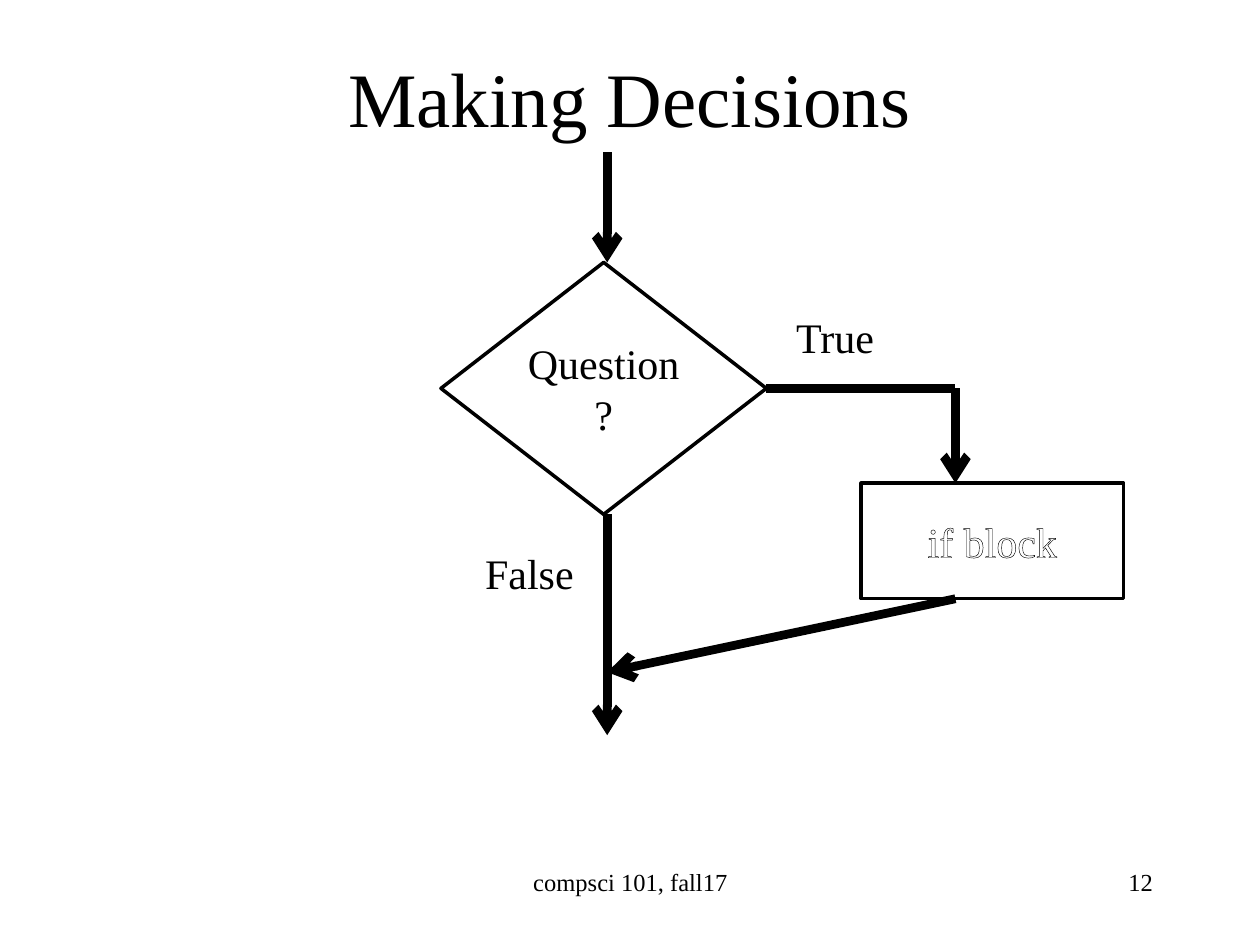
from lxml.etree import SubElement
from pptx import Presentation
from pptx.dml.color import RGBColor
from pptx.enum.shapes import MSO_CONNECTOR, MSO_SHAPE
from pptx.enum.text import MSO_ANCHOR, PP_ALIGN
from pptx.oxml import parse_xml
from pptx.oxml.ns import nsdecls, qn
from pptx.util import Cm, Pt

BLACK, WHITE = "000000", "FFFFFF"


def color(hex_text):
    return RGBColor.from_string(hex_text)


def write(shape, text, size, align, anchor, text_color=BLACK):
    """Put one formatted paragraph in the shape and return its run."""
    text_frame = shape.text_frame
    text_frame.text = text
    text_frame.vertical_anchor = anchor
    paragraph = text_frame.paragraphs[0]
    paragraph.alignment = align
    run = paragraph.runs[0]
    run.font.name = "Times New Roman"
    run.font.size = Pt(size)
    run.font.color.rgb = color(text_color)
    return run


presentation = Presentation()
presentation.slide_width = Cm(25.4)
presentation.slide_height = Cm(19.05)
slide = presentation.slides.add_slide(presentation.slide_layouts[6])

# Title, branch labels and footer
texts = [
    ("Making Decisions", 1.9, 0.84, 21.59, 2.24, 44, PP_ALIGN.CENTER, MSO_ANCHOR.MIDDLE, True),
    ("True", 15.8, 6.15, 2.08, 1.3, 24, PP_ALIGN.LEFT, MSO_ANCHOR.TOP, False),
    ("False", 9.53, 10.92, 2.31, 1.3, 24, PP_ALIGN.LEFT, MSO_ANCHOR.TOP, False),
    ("compsci 101, fall17", 8.69, 17.35, 8.04, 1.27, 14, PP_ALIGN.CENTER, MSO_ANCHOR.TOP, True),
    ("12", 18.2, 17.35, 5.29, 1.27, 14, PP_ALIGN.RIGHT, MSO_ANCHOR.TOP, True),
]
for text, left, top, width, height, size, align, anchor, wrap in texts:
    box = slide.shapes.add_textbox(Cm(left), Cm(top), Cm(width), Cm(height))
    box.text_frame.word_wrap = wrap
    write(box, text, size, align, anchor)

# Flowchart nodes
question = slide.shapes.add_shape(MSO_SHAPE.DIAMOND, Cm(8.89), Cm(5.29), Cm(6.56), Cm(5.08))
if_block = slide.shapes.add_shape(MSO_SHAPE.RECTANGLE, Cm(17.36), Cm(9.74), Cm(5.29), Cm(2.33))
for node in (question, if_block):
    node.shadow.inherit = False
    node.fill.background()
    node.line.color.rgb = color(BLACK)
    node.line.width = Pt(2)
question.text_frame.margin_left = question.text_frame.margin_right = 0
write(question, "Question?", 24, PP_ALIGN.CENTER, MSO_ANCHOR.MIDDLE)
block_run = write(if_block, "if block", 24, PP_ALIGN.CENTER, MSO_ANCHOR.MIDDLE, WHITE)
block_run.font._element.insert(0, parse_xml(
    f'<a:ln {nsdecls("a")} w="{Pt(0.75)}"><a:solidFill>'
    f'<a:srgbClr val="{BLACK}"/></a:solidFill></a:ln>'))

# Flow lines: start, end, arrowhead, node joined at its right corner
main_x, branch_x, branch_y = 12.24, 19.26, 7.83
flows = [
    ((main_x, 3.07), (main_x, 5.29), True, None),
    ((15.45, branch_y), (branch_x, branch_y), False, question),
    ((branch_x, branch_y), (branch_x, 9.74), True, None),
    ((main_x, 10.37), (main_x, 14.82), True, None),
    ((branch_x, 12.07), (main_x, 13.55), True, None),
]
for start, end, has_arrow, start_node in flows:
    connector = slide.shapes.add_connector(
        MSO_CONNECTOR.STRAIGHT, *(Cm(value) for value in start + end))
    if start_node is not None:
        connector.begin_connect(start_node, 3)
    connector.line.color.rgb = color(BLACK)
    connector.line.width = Pt(5)
    if has_arrow:
        SubElement(connector.line._get_or_add_ln(), qn("a:tailEnd"), type="arrow")
    SubElement(connector._element.spPr, qn("a:effectLst"))

presentation.save("out.pptx")
